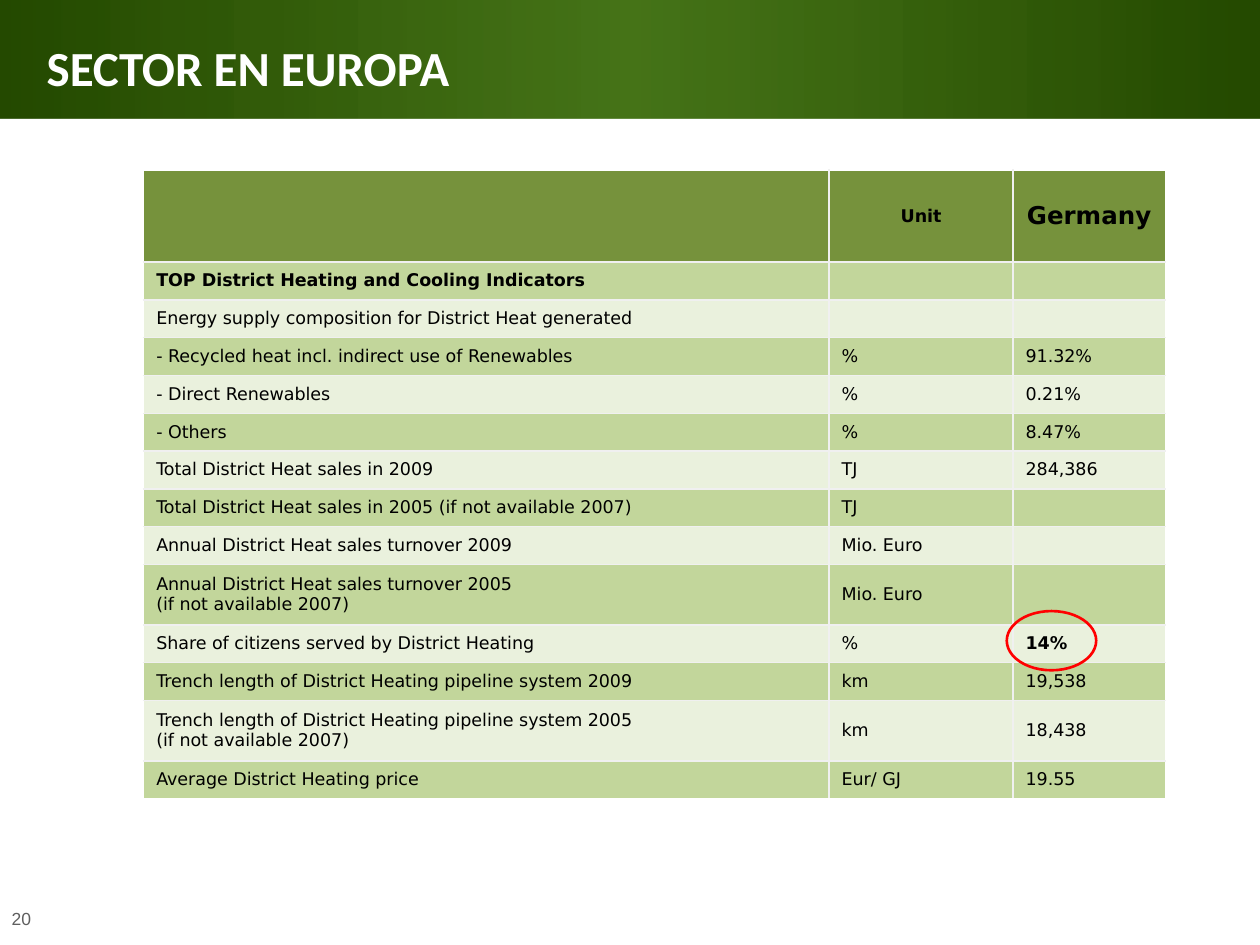
from lxml import etree
from pptx import Presentation
from pptx.dml.color import RGBColor
from pptx.enum.shapes import MSO_SHAPE
from pptx.enum.text import MSO_ANCHOR, PP_ALIGN
from pptx.oxml import parse_xml
from pptx.oxml.ns import nsdecls, qn
from pptx.util import Inches, Pt

OVAL, RECT = MSO_SHAPE.OVAL, MSO_SHAPE.RECTANGLE
MIDDLE = MSO_ANCHOR.MIDDLE
LEFT, CENTER = PP_ALIGN.LEFT, PP_ALIGN.CENTER

WHITE = RGBColor(0xFF, 0xFF, 0xFF)
BLACK = RGBColor(0, 0, 0)
GREY = RGBColor(0x5F, 0x5F, 0x5F)
RULE = RGBColor(0xF0, 0xF0, 0xF0)
RED = RGBColor(0xFF, 0, 0)
HEADER_GREEN = RGBColor(0x76, 0x92, 0x3C)
MID_GREEN = RGBColor(0xC2, 0xD6, 0x9B)
PALE_GREEN = RGBColor(0xEA, 0xF1, 0xDD)
BAND_DARK = RGBColor(0x24, 0x49, 0x00)
BAND_LIGHT = RGBColor(0x33, 0x66, 0x00)

ROWS = [
    ("", "Unit", "Germany"),
    ("TOP District Heating and Cooling Indicators", "", ""),
    ("Energy supply composition for District Heat generated", "", ""),
    ("- Recycled heat incl. indirect use of Renewables", "%", "91.32%"),
    ("- Direct Renewables", "%", "0.21%"),
    ("- Others", "%", "8.47%"),
    ("Total District Heat sales in 2009", "TJ", "284,386"),
    ("Total District Heat sales in 2005 (if not available 2007)", "TJ", ""),
    ("Annual District Heat sales turnover 2009", "Mio. Euro", ""),
    ("Annual District Heat sales turnover 2005\v(if not available 2007)", "Mio. Euro", ""),
    ("Share of citizens served by District Heating", "%", "14%"),
    ("Trench length of District Heating pipeline system 2009", "km", "19,538"),
    ("Trench length of District Heating pipeline system 2005\v(if not available 2007)",
     "km", "18,438"),
    ("Average District Heating price", "Eur/ GJ", "19.55"),
]
COL_WIDTHS = [5.44, 1.46, 1.21]
HEADER_HEIGHT, ROW_HEIGHT, TWO_LINE_HEIGHT = 0.73, 0.3, 0.48
BOLD_TEXTS = {ROWS[1][0], "14%"}


def set_font(p, name, size, color, bold=False):
    p.font.name = name
    p.font.size = Pt(size)
    p.font.color.rgb = color
    p.font.bold = bold


def set_borders(cell, colors):
    """Draw 1 pt borders in the given left, right, top and bottom colours."""
    tcPr = cell._tc.get_or_add_tcPr()
    for i, (side, color) in enumerate(zip("LRTB", colors)):
        ln = etree.Element(qn(f"a:ln{side}"), w=str(Pt(1)))
        fill = etree.SubElement(ln, qn("a:solidFill"))
        etree.SubElement(fill, qn("a:srgbClr"), val=str(color))
        tcPr.insert(i, ln)


prs = Presentation()
prs.slide_width, prs.slide_height = Inches(10), Inches(7.5)
slide = prs.slides.add_slide(prs.slide_layouts[5])
shapes = slide.shapes

# Header band, behind the title
band = shapes.add_shape(RECT, 0, 0, Inches(10), Inches(0.94))
band.shadow.inherit = False
band.line.fill.background()
band._element.spPr.find(qn("a:prstGeom")).addnext(parse_xml(
    f'<a:gradFill {nsdecls("a")} rotWithShape="1"><a:gsLst>'
    f'<a:gs pos="0"><a:srgbClr val="{BAND_DARK}"/></a:gs>'
    f'<a:gs pos="50000"><a:srgbClr val="{BAND_LIGHT}"><a:alpha val="90000"/></a:srgbClr></a:gs>'
    f'<a:gs pos="100000"><a:srgbClr val="{BAND_DARK}"/></a:gs>'
    '</a:gsLst><a:lin ang="0" scaled="1"/></a:gradFill>'))

title = shapes.title
title._element.addprevious(band._element)
title.left, title.top = Inches(0.15), Inches(0.13)
title.width, title.height = Inches(8.5), Inches(0.8)
tf = title.text_frame
tf.text = "SECTOR EN EUROPA"
tf.vertical_anchor = MIDDLE
tf.margin_left = Inches(0.22)
p = tf.paragraphs[0]
p.alignment = LEFT
set_font(p, "Calibri", 28, WHITE, bold=True)

# Slide number
number = shapes.add_textbox(Inches(-0.06), Inches(7.16), Inches(0.46), Inches(0.32))
tf = number.text_frame
tf.word_wrap = True
tf.text = "20"
p = tf.paragraphs[0]
p.alignment = CENTER
set_font(p, "Arial", 10, GREY)

# Indicator table
heights = [HEADER_HEIGHT] + [
    TWO_LINE_HEIGHT if "\v" in label else ROW_HEIGHT for label, _, _ in ROWS[1:]]
table = shapes.add_table(len(ROWS), len(COL_WIDTHS), Inches(1.14), Inches(1.35),
                         Inches(sum(COL_WIDTHS)), Inches(sum(heights))).table
for column, width in zip(table.columns, COL_WIDTHS):
    column.width = Inches(width)
last_row, last_col = len(ROWS) - 1, len(COL_WIDTHS) - 1

for r, texts in enumerate(ROWS):
    table.rows[r].height = Inches(heights[r])
    is_header = r == 0
    row_fill = HEADER_GREEN if is_header else MID_GREEN if r % 2 else PALE_GREEN
    for c, text in enumerate(texts):
        cell = table.cell(r, c)
        cell.fill.solid()
        cell.fill.fore_color.rgb = row_fill
        on_edge = (c == 0, c == last_col, r == 0, r == last_row)
        set_borders(cell, [WHITE if edge else RULE for edge in on_edge])
        cell.vertical_anchor = MIDDLE
        cell.text = text
        p = cell.text_frame.paragraphs[0]
        p.alignment = CENTER if is_header else LEFT
        set_font(p, "DejaVu Sans", 14 if text == "Germany" else 10, BLACK,
                 bold=is_header or text in BOLD_TEXTS)

# Ring around the share of citizens served
ring = shapes.add_shape(OVAL, Inches(7.99), Inches(4.85), Inches(0.71), Inches(0.47))
ring.shadow.inherit = False
ring.fill.background()
ring.line.color.rgb = RED
ring.line.width = Pt(1.5)

prs.save("out.pptx")
